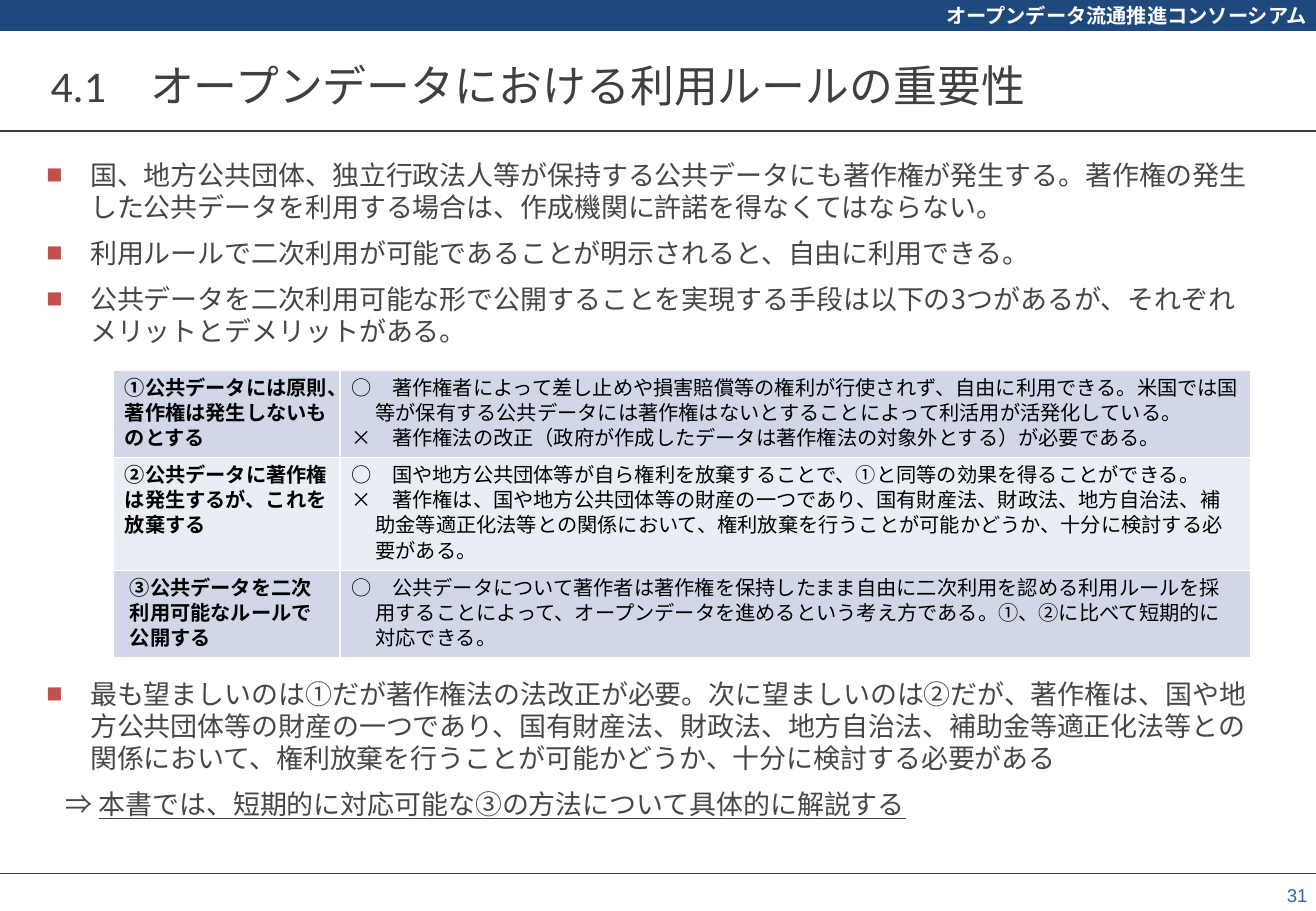
import pptx
import pptx.dml.color
import pptx.enum.shapes
import pptx.enum.text
import pptx.oxml
import pptx.oxml.ns
import pptx.util

Pt = pptx.util.Pt
ALIGN = pptx.enum.text.PP_ALIGN
ANCHOR = pptx.enum.text.MSO_ANCHOR
JAPANESE = "Noto Sans CJK JP"
COLORS = {
    "navy": "1F497D", "rule": "404040", "body": "464646", "bullet": "C0504D",
    "number": "336699", "white": "FFFFFF", "black": "000000",
    "band_dark": "D0D8E8", "band_light": "E9EDF4",
}
INTRODUCTION = [
    "国、地方公共団体、独立行政法人等が保持する公共データにも著作権が発生する。著作権の発生した公共データを利用する場合は、作成機関に許諾を得なくてはならない。",
    "利用ルールで二次利用が可能であることが明示されると、自由に利用できる。",
    "公共データを二次利用可能な形で公開することを実現する手段は以下の3つがあるが、それぞれメリットとデメリットがある。",
]
CONCLUSION = "最も望ましいのは①だが著作権法の法改正が必要。次に望ましいのは②だが、著作権は、国や地方公共団体等の財産の一つであり、国有財産法、財政法、地方自治法、補助金等適正化法等との関係において、権利放棄を行うことが可能かどうか、十分に検討する必要がある"
APPROACHES = [
    ("①公共データには原則、著作権は発生しないものとする", [
        "○　著作権者によって差し止めや損害賠償等の権利が行使されず、自由に利用できる。米国では国等が保有する公共データには著作権はないとすることによって利活用が活発化している。",
        "×　著作権法の改正（政府が作成したデータは著作権法の対象外とする）が必要である。"]),
    ("②公共データに著作権は発生するが、これを放棄する", [
        "○　国や地方公共団体等が自ら権利を放棄することで、①と同等の効果を得ることができる。",
        "×　著作権は、国や地方公共団体等の財産の一つであり、国有財産法、財政法、地方自治法、補助金等適正化法等との関係において、権利放棄を行うことが可能かどうか、十分に検討する必要がある。"]),
    ("③公共データを二次利用可能なルールで公開する", [
        "○　公共データについて著作者は著作権を保持したまま自由に二次利用を認める利用ルールを採用することによって、オープンデータを進めるという考え方である。①、②に比べて短期的に対応できる。"]),
]


def rgb(name):
    """Return the named colour."""
    return pptx.dml.color.RGBColor.from_string(COLORS[name])


def add_xml(parent, markup):
    """Append one DrawingML element to a parent."""
    parent.append(pptx.oxml.parse_xml(
        markup.replace(" ", f" {pptx.oxml.ns.nsdecls('a')} ", 1)))


def write(frame, text, size=16, color="body", font=JAPANESE, bold=False,
          underline=False, align=ALIGN.LEFT, line=None, before=0,
          indent=0, hanging=0, bullet=False, join=False):
    """Write text as a new paragraph, or as a run joined to the last one."""
    paragraph = frame.paragraphs[-1]
    if not join:
        if paragraph.runs:
            paragraph = frame.add_paragraph()
        paragraph.alignment = align
        paragraph.space_before = Pt(before)
        if line:
            paragraph.line_spacing = Pt(line)
        properties = paragraph._p.get_or_add_pPr()
        properties.set("marL", str(Pt(indent)))
        properties.set("indent", str(Pt(-hanging)))
        if bullet:
            add_xml(properties, f'<a:buClr ><a:srgbClr val="{COLORS["bullet"]}"/></a:buClr>')
            add_xml(properties, '<a:buFont typeface="Arial"/>')
            add_xml(properties, '<a:buChar char="■"/>')
    run = paragraph.add_run()
    run.text = text
    run.font.size = Pt(size)
    run.font.name = font
    run.font.bold = bold
    run.font.underline = underline
    run.font.color.rgb = rgb(color)
    add_xml(run._r.get_or_add_rPr(), f'<a:ea typeface="{JAPANESE}"/>')


def set_frame(frame, anchor=ANCHOR.TOP, side=0, edge=0):
    """Set wrapping, anchor and margins of a text frame."""
    frame.word_wrap = True
    frame.vertical_anchor = anchor
    frame.margin_left = frame.margin_right = Pt(side)
    frame.margin_top = frame.margin_bottom = Pt(edge)
    return frame


def add_frame(slide, box, **options):
    """Add a text box and return its frame."""
    shape = slide.shapes.add_textbox(*map(Pt, box))
    return set_frame(shape.text_frame, **options)


def add_rule(slide, left, top, width):
    """Draw a horizontal rule."""
    rule = slide.shapes.add_connector(
        pptx.enum.shapes.MSO_CONNECTOR.STRAIGHT,
        Pt(left), Pt(top), Pt(left + width), Pt(top))
    rule.line.color.rgb = rgb("rule")
    rule.line.width = Pt(1)
    add_xml(rule._element.spPr, "<a:effectLst />")


def add_header(slide, left, top, width, height):
    """Draw the banner, the title and the rule under it."""
    banner = slide.shapes.add_shape(
        pptx.enum.shapes.MSO_SHAPE.RECTANGLE, Pt(left), Pt(top), Pt(width), Pt(18))
    banner.shadow.inherit = False
    banner.fill.solid()
    banner.fill.fore_color.rgb = rgb("navy")
    banner.line.color.rgb = rgb("navy")
    banner.line.width = Pt(0.75)
    write(set_frame(banner.text_frame, anchor=ANCHOR.MIDDLE, side=5),
          "オープンデータ流通推進コンソーシアム", size=12, color="white",
          bold=True, align=ALIGN.RIGHT)
    title = add_frame(slide, (left + 30, top + 24, width - 60, 53), anchor=ANCHOR.MIDDLE)
    write(title, "4.1　オープンデータにおける利用ルールの重要性",
          size=26, color="rule", font="Calibri")
    add_rule(slide, left, top + height, width)


def add_introduction(slide, box):
    """Write the bullets above the table."""
    frame = add_frame(slide, box)
    for index, text in enumerate(INTRODUCTION):
        write(frame, text, line=19.15, before=8 if index else 0,
              indent=26, hanging=26, bullet=True)


def add_conclusion(slide, box):
    """Write the bullet and the closing remark below the table."""
    frame = add_frame(slide, box)
    write(frame, CONCLUSION, line=19.15, indent=26, hanging=26, bullet=True)
    write(frame, "⇒ ", line=19.15, before=8, indent=11.5)
    write(frame, "本書では、短期的に対応可能な③の方法について具体的に解説する",
          underline=True, join=True)


def fill_cell(cell, color):
    """Give a cell its margins, white borders and fill."""
    cell.margin_left, cell.margin_right = Pt(7), Pt(6.5)
    cell.margin_top = cell.margin_bottom = Pt(3.4)
    for side in ("lnL", "lnR", "lnT", "lnB"):
        add_xml(cell._tc.get_or_add_tcPr(),
                f'<a:{side} w="{Pt(1)}"><a:solidFill><a:srgbClr val="{COLORS["white"]}"/>'
                f"</a:solidFill></a:{side}>")
    cell.fill.solid()
    cell.fill.fore_color.rgb = rgb(color)


def add_approaches(slide, left, top, width, height):
    """Build the table of three approaches with their merits and demerits."""
    table = slide.shapes.add_table(
        len(APPROACHES), 2, Pt(left), Pt(top), Pt(width), Pt(height)).table
    table.first_row = table.horz_banding = False
    table.columns[0].width = Pt(134.5)
    table.columns[1].width = Pt(width - 134.5)
    for index, (approach, points) in enumerate(APPROACHES):
        table.rows[index].height = Pt(67 if index == 1 else (height - 67) / 2)
        name, detail = table.cell(index, 0), table.cell(index, 1)
        for cell in (name, detail):
            fill_cell(cell, "band_light" if index % 2 else "band_dark")
        write(name.text_frame, approach, size=12, color="black", bold=True,
              line=15, indent=3 if index == 2 else 0)
        for point in points:
            write(detail.text_frame, point, size=12, color="black",
                  line=15, indent=14, hanging=14)


def add_footer(slide, left, top, width, height):
    """Draw the bottom rule and the page number."""
    add_rule(slide, left, top, width)
    number = add_frame(slide, (left + width - 32, top + 2, 32, height - 2),
                       anchor=ANCHOR.BOTTOM, side=5, edge=3)
    write(number, "31", size=11, color="number", font="Arial", align=ALIGN.RIGHT)


def main():
    """Build the slide and save it."""
    presentation = pptx.Presentation()
    presentation.slide_width, presentation.slide_height = Pt(780), Pt(540)
    slide = presentation.slides.add_slide(presentation.slide_layouts[6])
    add_header(slide, 0, 0, 780, 77.75)
    add_introduction(slide, (27.5, 94, 720, 115))
    add_approaches(slide, 67, 219.25, 674.5, 170.5)
    add_conclusion(slide, (27.5, 401.5, 720, 90))
    add_footer(slide, 0, 517.75, 780, 22.25)
    presentation.save("out.pptx")


if __name__ == "__main__":
    main()
